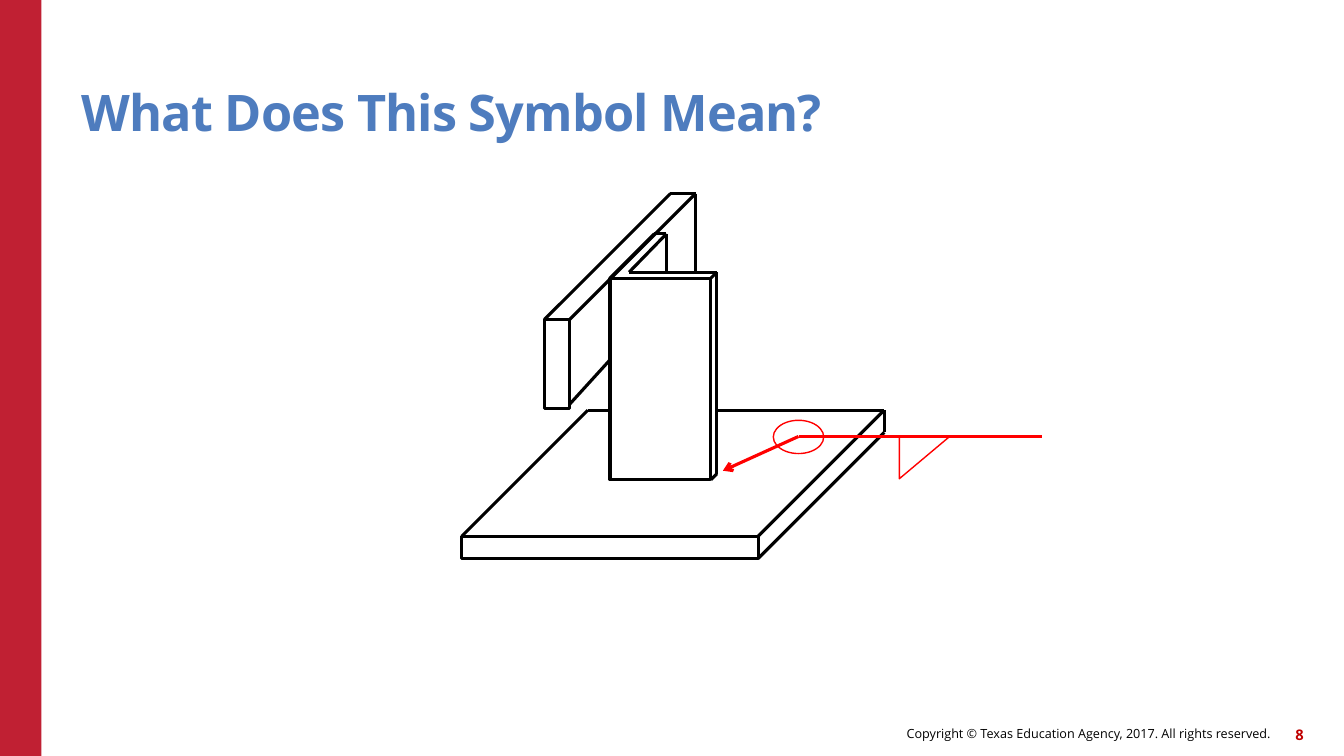
from typing import NamedTuple

from lxml import etree
from pptx import Presentation
from pptx import util as u
from pptx.dml.color import RGBColor
from pptx.enum import shapes, text
from pptx.oxml.ns import qn

FONT = "Open Sans"
BLACK = "000000"
RED = "FF0000"


class Box(NamedTuple):
    left: float
    top: float
    width: float
    height: float


class Edge(NamedTuple):
    x1: float
    y1: float
    x2: float
    y2: float


class Label(NamedTuple):
    content: str
    box: Box
    size: float
    color: str
    bold: bool


BASE_FRONT = Box(4.58, 5.32, 2.94, 0.22)
COLUMN_FRONT = Box(6.05, 2.76, 1, 2)
BEAM_FRONT = Box(5.4, 3.17, 0.25, 0.88)
DEPTH = 1.25


def receding(x: float, y: float, depth: float = DEPTH) -> Edge:
    return Edge(x, y, x + depth, y - depth)


BASE_EDGES = [
    receding(4.58, 5.32),
    receding(7.52, 5.32),
    receding(7.52, 5.54),
    Edge(8.77, 4.07, 8.77, 4.29),
    Edge(7.11, 4.07, 8.77, 4.07),
    Edge(5.83, 4.07, 6.05, 4.07),
]
COLUMN_EDGES = [
    receding(7.05, 2.76, 0.06),
    receding(7.05, 4.76, 0.06),
    receding(6.05, 2.76, 0.44),
    Edge(7.11, 2.7, 7.11, 4.7),
    Edge(6.24, 2.7, 7.11, 2.7),
    Edge(6.24, 2.7, 6.61, 2.32),
    Edge(6.49, 2.32, 6.61, 2.32),
    Edge(6.61, 2.32, 6.61, 2.7),
]
BEAM_EDGES = [
    receding(5.4, 3.17),
    receding(5.65, 3.17),
    Edge(5.65, 4.01, 6.05, 3.57),
    Edge(6.65, 1.92, 6.9, 1.92),
    Edge(6.9, 1.92, 6.9, 2.7),
]
LABELS = [
    Label("Copyright © Texas Education Agency, 2017. All rights reserved.",
          Box(6.14, 7.12, 6.46, 0.32), 9, BLACK, False),
    Label("8", Box(12.51, 7.13, 0.42, 0.32), 10.5, "C00000", True),
]


def rgb(value: str) -> RGBColor:
    return RGBColor.from_string(value)


def inches(values: tuple) -> list:
    return [u.Inches(value) for value in values]


def add_outline(parent, kind, box: Box, color: str, width: float):
    shape = parent.add_shape(kind, *inches(box))
    shape.shadow.inherit = False
    shape.fill.background()
    shape.line.color.rgb = rgb(color)
    shape.line.width = u.Pt(width)
    return shape


def add_edge(parent, edge: Edge, color: str):
    connector = parent.add_connector(shapes.MSO_CONNECTOR.STRAIGHT, *inches(edge))
    connector.line.color.rgb = rgb(color)
    connector.line.width = u.Pt(2.25)
    etree.SubElement(connector._element.spPr, qn("a:effectLst"))
    return connector


def format_text(shape, content: str, size: float, color: str, bold: bool,
                alignment, anchor):
    frame = shape.text_frame
    frame.text = content
    frame.word_wrap = True
    frame.auto_size = text.MSO_AUTO_SIZE.NONE
    frame.vertical_anchor = anchor
    frame.margin_left = frame.margin_right = 0
    frame.margin_top = frame.margin_bottom = 0
    paragraph = frame.paragraphs[0]
    paragraph.alignment = alignment
    run = paragraph.runs[0]
    run.font.name = FONT
    run.font.size = u.Pt(size)
    run.font.bold = bold
    run.font.color.rgb = rgb(color)
    return paragraph


def add_title(slide):
    title = slide.shapes.title
    title.left, title.top, title.width, title.height = inches(Box(0.81, 0.45, 11, 0.96))
    paragraph = format_text(title, "What Does This Symbol Mean?", 36, "4E7CBE", True,
                            text.PP_ALIGN.LEFT, text.MSO_ANCHOR.BOTTOM)
    paragraph.line_spacing = 0.9
    paragraph.runs[0].font._element.set("spc", "-60")


def add_frame(slide):
    bar = slide.shapes.add_shape(shapes.MSO_SHAPE.RECTANGLE, *inches(Box(0, 0, 0.41, 7.5)))
    bar.shadow.inherit = False
    bar.fill.solid()
    bar.fill.fore_color.rgb = rgb("C02033")
    bar.line.fill.background()
    for label in LABELS:
        shape = slide.shapes.add_textbox(*inches(label.box))
        format_text(shape, label.content, label.size, label.color, label.bold,
                    text.PP_ALIGN.RIGHT, text.MSO_ANCHOR.MIDDLE)


def add_joint(slide):
    group = slide.shapes.add_group_shape()
    for front in (BASE_FRONT, COLUMN_FRONT, BEAM_FRONT):
        add_outline(group.shapes, shapes.MSO_SHAPE.RECTANGLE, front, BLACK, 2.25)
    for edge in BASE_EDGES + COLUMN_EDGES + BEAM_EDGES:
        add_edge(group.shapes, edge, BLACK)


def add_weld_symbol(slide):
    add_edge(slide.shapes, Edge(7.92, 4.33, 10.33, 4.33), RED)
    leader = add_edge(slide.shapes, Edge(7.92, 4.33, 7.17, 4.67), RED)
    etree.SubElement(leader.line._get_or_add_ln(), qn("a:tailEnd"), type="arrow")
    add_outline(slide.shapes, shapes.MSO_SHAPE.OVAL, Box(7.67, 4.17, 0.5, 0.33), RED, 1)
    fillet = add_outline(slide.shapes, shapes.MSO_SHAPE.RIGHT_TRIANGLE,
                         Box(8.92, 4.33, 0.5, 0.42), RED, 1)
    fillet._element.spPr.find(qn("a:xfrm")).set("flipV", "1")


def main():
    presentation = Presentation()
    presentation.slide_width = u.Inches(13.33)
    presentation.slide_height = u.Inches(7.5)
    slide = presentation.slides.add_slide(presentation.slide_layouts[5])
    add_frame(slide)
    add_title(slide)
    add_joint(slide)
    add_weld_symbol(slide)
    presentation.save("out.pptx")


if __name__ == "__main__":
    main()
